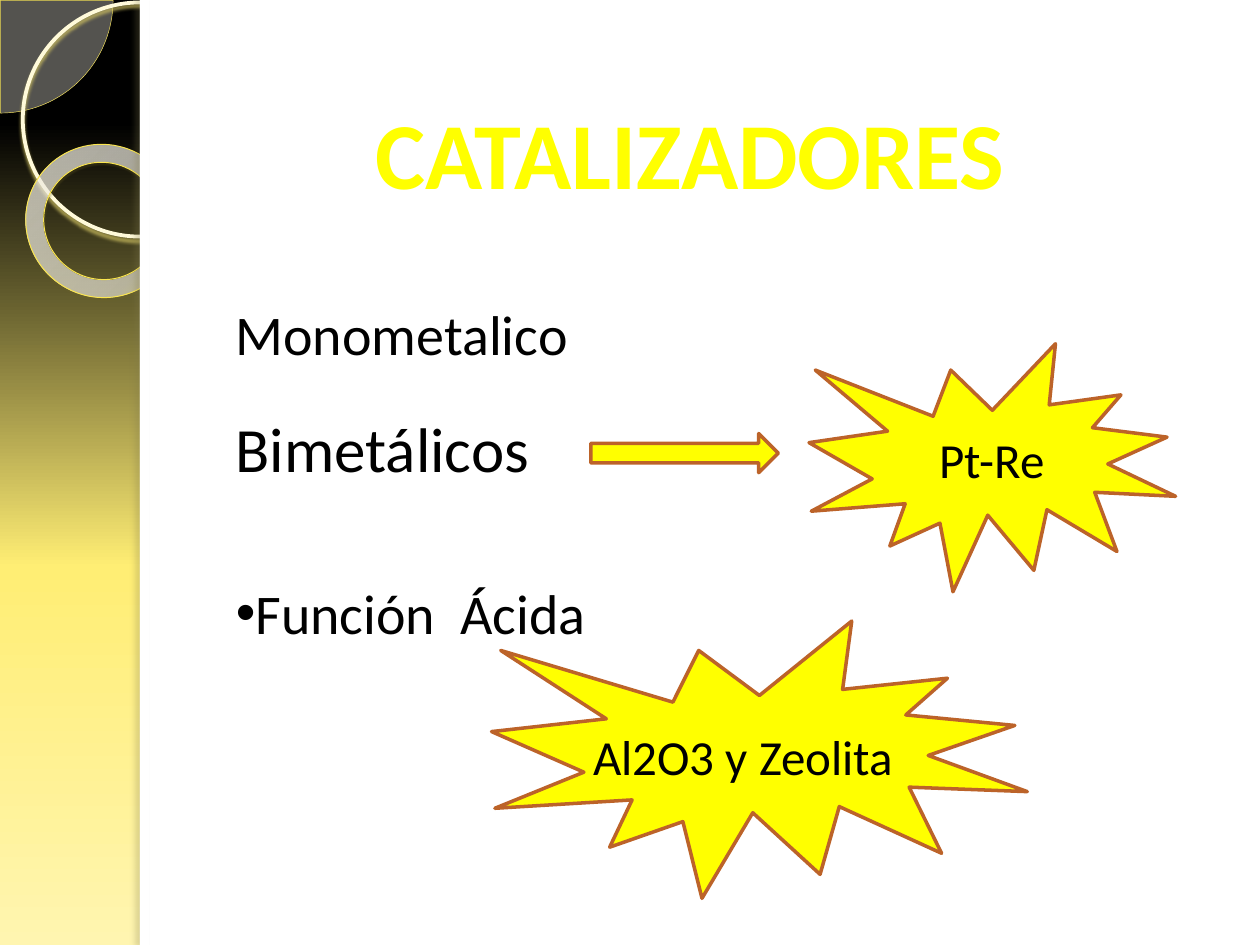
import dataclasses
import typing

import lxml.etree
import pptx
import pptx.dml.color
import pptx.enum.shapes
import pptx.enum.text
import pptx.oxml.ns
import pptx.util

Cm = pptx.util.Cm
Kind = pptx.enum.shapes.MSO_SHAPE
Align = pptx.enum.text.PP_ALIGN
qn = pptx.oxml.ns.qn
Box = tuple[float, float, float, float]
Stop = tuple[float, str, float]


@dataclasses.dataclass
class Shade:
    """Outer shadow of a shape."""
    hue: str
    alpha: float
    blur: float
    dist: float
    angle: float


@dataclasses.dataclass
class Form:
    """Preset shape with its look."""
    kind: Kind
    box: Box
    fill: str | None = None
    line: str | None = None
    width: float = 2
    adj: tuple[float, ...] = ()
    alpha: float = 100
    turn: float = 0
    shade: Shade | None = None


@dataclasses.dataclass
class Label:
    """Line of text with its place."""
    text: str
    box: Box
    size: float
    hue: str = "000000"
    bold: bool = False
    align: Align = Align.LEFT
    wrap: bool = True


def color(text: str) -> pptx.dml.color.RGBColor:
    """Turn a hex string into a colour."""
    return pptx.dml.color.RGBColor.from_string(text)


def node(root: typing.Any, tag: str, **attrs: typing.Any) -> typing.Any:
    """Add a drawing element with its attributes."""
    return lxml.etree.SubElement(
        root, qn(f"a:{tag}"), {key: str(val) for key, val in attrs.items()})


def tint(root: typing.Any, hue: str, alpha: float) -> None:
    """Add a colour with its opacity in percent."""
    node(node(root, "srgbClr", val=hue), "alpha", val=round(alpha * 1000))


def blend(root: typing.Any, stops: list[Stop]) -> typing.Any:
    """Put a gradient in the place of an empty fill."""
    old = root.find(qn("a:noFill"))
    grad = node(root, "gradFill", rotWithShape=1)
    root.replace(old, grad)
    items = node(grad, "gsLst")
    for pos, hue, alpha in stops:
        tint(node(items, "gs", pos=pos * 1000), hue, alpha)
    return grad


def place(shape: typing.Any, box: Box) -> None:
    """Move and size a shape in centimetres."""
    shape.left, shape.top, shape.width, shape.height = map(Cm, box)


def draw(slide: typing.Any, form: Form) -> typing.Any:
    """Draw a preset shape."""
    shape = slide.shapes.add_shape(form.kind, *map(Cm, form.box))
    shape.rotation = form.turn
    for index, value in enumerate(form.adj):
        shape.adjustments[index] = value
    if form.fill:
        shape.fill.solid()
        shape.fill.fore_color.rgb = color(form.fill)
        if form.alpha < 100:
            mark = shape.element.spPr.find(qn("a:solidFill"))[0]
            node(mark, "alpha", val=form.alpha * 1000)
    else:
        shape.fill.background()
    if form.line:
        shape.line.color.rgb = color(form.line)
        shape.line.width = pptx.util.Pt(form.width)
    else:
        shape.line.fill.background()
    shape.shadow.inherit = False
    if form.shade:
        cast = form.shade
        root = shape.element.spPr.find(qn("a:effectLst"))
        outer = node(root, "outerShdw", blurRad=pptx.util.Pt(cast.blur),
                     dist=pptx.util.Pt(cast.dist), dir=cast.angle * 60000,
                     algn="tl", rotWithShape=0)
        tint(outer, cast.hue, cast.alpha)
    return shape


def write(shape: typing.Any, label: Label) -> None:
    """Set and format the text of a shape."""
    place(shape, label.box)
    frame = shape.text_frame
    frame.text = label.text
    frame.word_wrap = label.wrap
    frame.auto_size = pptx.enum.text.MSO_AUTO_SIZE.SHAPE_TO_FIT_TEXT
    frame.vertical_anchor = pptx.enum.text.MSO_ANCHOR.TOP
    par = frame.paragraphs[0]
    par.alignment = label.align
    par.space_before = pptx.util.Pt(0)
    par.font.name = "Calibri"
    par.font.size = pptx.util.Pt(label.size)
    par.font.bold = label.bold
    par.font.color.rgb = color(label.hue)


def seal(kind: Kind, box: Box) -> Form:
    """Describe a yellow shape with a brown outline."""
    return Form(kind, box, "FFFF00", "BC6329")


RING = Form(Kind.DONUT, (0.51, 2.92, 3.12, 3.07), None, "FBE64F", 0.58,
            (0.118,), turn=38.6, shade=Shade("706728", 35, 1, 1.2, 75))
DECOR = [
    Form(Kind.PIE, (-2.26, -2.26, 4.54, 4.54), "FFFDF1", "FFEC62", 0.25,
         (0, 54.02), 33),
    Form(Kind.OVAL, (0.46, 0.05, 4.72, 4.72), None, "FFFADA", 2.15,
         shade=Shade("CFC162", 85, 2, 2, 90)),
    RING,
    Form(Kind.RECTANGLE, (2.82, 0, 22.58, 19.05), "FFFFFF"),
    Form(Kind.RECTANGLE, (2.82, 0, 0.2, 19.05), "FFFFFF",
         shade=Shade("817B4C", 25, 3, 3, 180)),
]
SEALS = [
    seal(Kind.RIGHT_ARROW, (11.91, 8.74, 3.78, 0.79)),
    seal(Kind.EXPLOSION1, (16.31, 6.93, 7.39, 5)),
    seal(Kind.EXPLOSION1, (9.91, 12.52, 10.8, 5.59)),
]
LABELS = [
    Label("Monometalico", (4.5, 5.92, 8.61, 1.63), 32),
    Label("Bimetálicos", (4.5, 8.13, 6.81, 1.8), 36),
    Label("Pt-Re", (18.69, 8.53, 2.79, 1.45), 28),
    Label("Al2O3 y Zeolita", (11.71, 14.53, 7.39, 1.45), 28),
]
TITLE = Label("CATALIZADORES", (5.16, 1.78, 17.5, 2.57), 54, "FFFF00", True,
              Align.CENTER, False)
ITEM = Label("Función  Ácida", (4.5, 11.53, 18.01, 1.63), 32)


def main() -> None:
    """Build the slide and save it."""
    deck = pptx.Presentation()
    deck.slide_width, deck.slide_height = Cm(25.4), Cm(19.05)
    slide = deck.slides.add_slide(deck.slide_layouts[1])
    slide.background.fill.background()
    back = blend(next(slide.element.iter(qn("p:bgPr"))), [
        (13, "000000", 100), (60, "FFEE74", 100), (100, "FFF5B0", 100)])
    node(back, "lin", ang=90 * 60000, scaled=0)
    for form in DECOR:
        shape = draw(slide, form)
        if form is RING:
            grad = blend(shape.element.spPr, [
                (0, "FFFDF5", 70), (70, "FFFEFA", 55), (100, "FFED6D", 60)])
            node(node(grad, "path", path="circle"), "fillToRect",
                 l=-408000, t=-50000, r=508000, b=150000)
    for form in SEALS:
        draw(slide, form)
    for label in LABELS:
        write(slide.shapes.add_textbox(*map(Cm, label.box)), label)
    body = slide.placeholders[1]
    write(body, ITEM)
    props = next(body.element.iter(qn("a:pPr")))
    props.set("marL", "0")
    props.set("indent", "0")
    write(slide.shapes.title, TITLE)
    for shape in (body, slide.shapes.title):
        shape.element.getparent().append(shape.element)
    deck.save("out.pptx")


if __name__ == "__main__":
    main()
